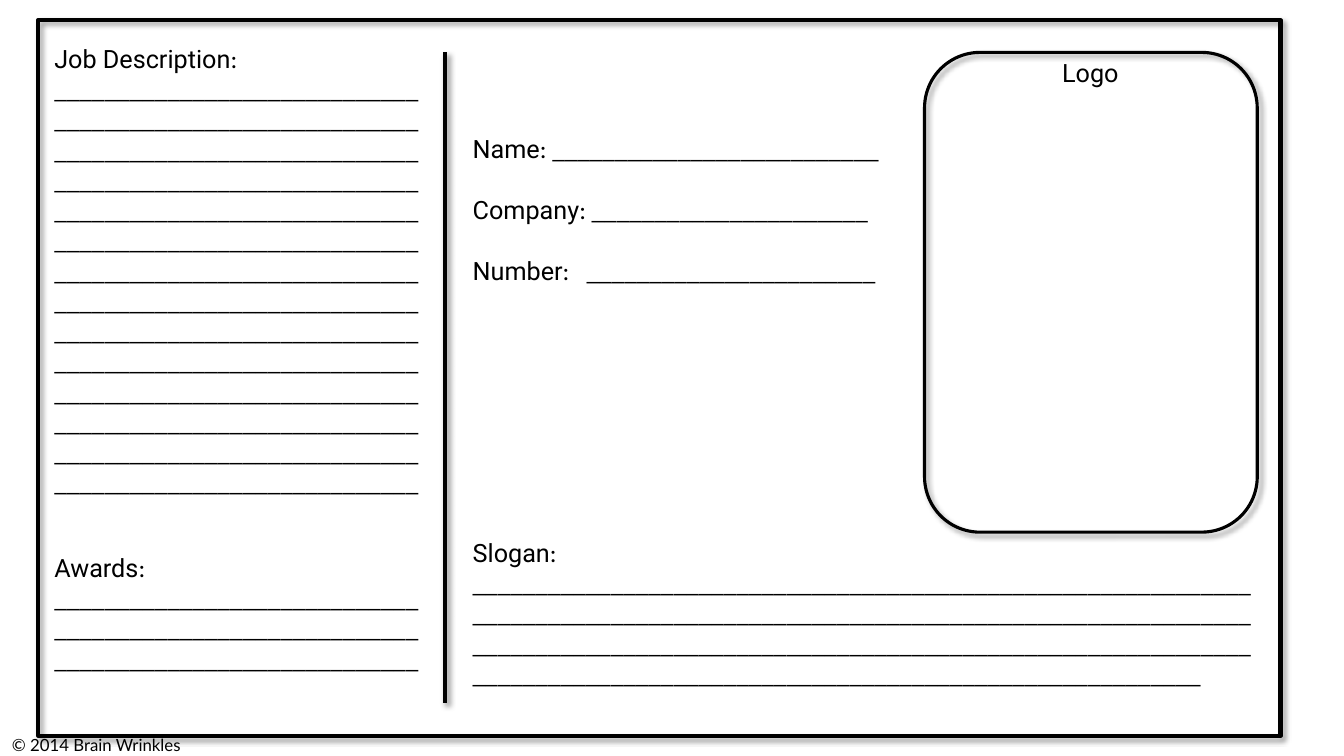
from lxml.etree import SubElement
from pptx import Presentation
from pptx.dml.color import RGBColor
from pptx.enum.shapes import MSO_CONNECTOR, MSO_SHAPE
from pptx.enum.text import MSO_AUTO_SIZE, PP_ALIGN
from pptx.oxml import parse_xml
from pptx.oxml.ns import nsdecls, qn
from pptx.util import Inches, Pt

BLACK = RGBColor(0x00, 0x00, 0x00)

SHADOW = f"""<a:effectLst {nsdecls("a")}>
  <a:outerShdw blurRad="{Pt(4)}" dist="{Pt(3)}" dir="2700000" algn="tl" rotWithShape="0">
    <a:srgbClr val="{BLACK}"><a:alpha val="40000"/></a:srgbClr>
  </a:outerShdw>
</a:effectLst>"""


class WorksheetSlide:
    label_font = {"name": "Roboto", "size": Pt(18)}
    rule_font = {"name": "Calibri", "size": Pt(18)}
    footer_font = {"name": "Lato", "size": Pt(12)}
    frame_format = {"word_wrap": True, "auto_size": MSO_AUTO_SIZE.NONE}

    def __init__(self, presentation):
        self.slide = presentation.slides.add_slide(presentation.slide_layouts[6])

    def apply(self, target, values):
        for name, value in values.items():
            setattr(target, name, value)

    def outline(self, shape, width):
        self.apply(shape.line, {"width": Pt(width)})
        shape.line.color.rgb = BLACK
        shape._element.spPr.append(parse_xml(SHADOW))

    def panel(self, kind, left, top, width, height, line_width):
        shape = self.slide.shapes.add_shape(
            kind, Inches(left), Inches(top), Inches(width), Inches(height)
        )
        shape.fill.background()
        self.outline(shape, line_width)

    def divider(self, x, top, bottom, line_width):
        connector = self.slide.shapes.add_connector(
            MSO_CONNECTOR.STRAIGHT, Inches(x), Inches(top), Inches(x), Inches(bottom)
        )
        self.outline(connector, line_width)

    def text(self, left, top, width, height, paragraphs, align=PP_ALIGN.LEFT, gap=0, tab=None):
        box = self.slide.shapes.add_textbox(
            Inches(left), Inches(top), Inches(width), Inches(height)
        )
        frame = box.text_frame
        self.apply(frame, self.frame_format)
        for index, runs in enumerate(paragraphs):
            paragraph = frame.add_paragraph() if index else frame.paragraphs[0]
            self.apply(paragraph, {"alignment": align, "space_before": Pt(gap if index else 0)})
            if tab:
                tabs = SubElement(paragraph._p.get_or_add_pPr(), qn("a:tabLst"))
                SubElement(tabs, qn("a:tab"), pos=str(Inches(tab)), algn="l")
            for words, font in runs:
                run = paragraph.add_run()
                run.text = words
                self.apply(run.font, font)
                run.font.color.rgb = BLACK

    def entry(self, label, blanks, separator=": "):
        return [(label, self.label_font), (separator + "_" * blanks, self.rule_font)]

    def rules(self, blanks):
        return [("_" * blanks, self.rule_font)]


def main():
    presentation = Presentation()
    presentation.slide_width = Inches(13.33)
    presentation.slide_height = Inches(7.5)
    card = WorksheetSlide(presentation)

    card.panel(MSO_SHAPE.RECTANGLE, 0.38, 0.2, 12.32, 7.1, 3)
    card.panel(MSO_SHAPE.ROUNDED_RECTANGLE, 9.17, 0.52, 3.3, 4.76, 2.25)
    card.divider(4.41, 0.52, 6.97, 3)

    details = [
        card.entry("Name", 26),
        card.entry("Company", 22),
        card.entry("Number", 23, ":\t"),
    ]
    card.text(4.59, 1.27, 4.46, 1.62, details, gap=22, tab=1.13)
    card.text(10.31, 0.52, 1.01, 0.4, [[("Logo", card.label_font)]], PP_ALIGN.CENTER)

    wide_line, narrow_line = 62, 29
    card.text(4.59, 5.28, 7.93, 2.22, [card.entry("Slogan", 4 * wide_line - 4)])
    description = [
        card.entry("Job Description", 6 * narrow_line),
        card.rules(4 * narrow_line),
        card.rules(4 * narrow_line),
    ]
    card.text(0.44, 0.38, 3.85, 5.55, description)
    card.text(0.44, 5.43, 3.85, 1.31, [card.entry("Awards", 3 * narrow_line)])
    card.text(0.02, 7.24, 2.9, 0.3, [[("© 2014 Brain Wrinkles", card.footer_font)]])

    presentation.save("out.pptx")


if __name__ == "__main__":
    main()
